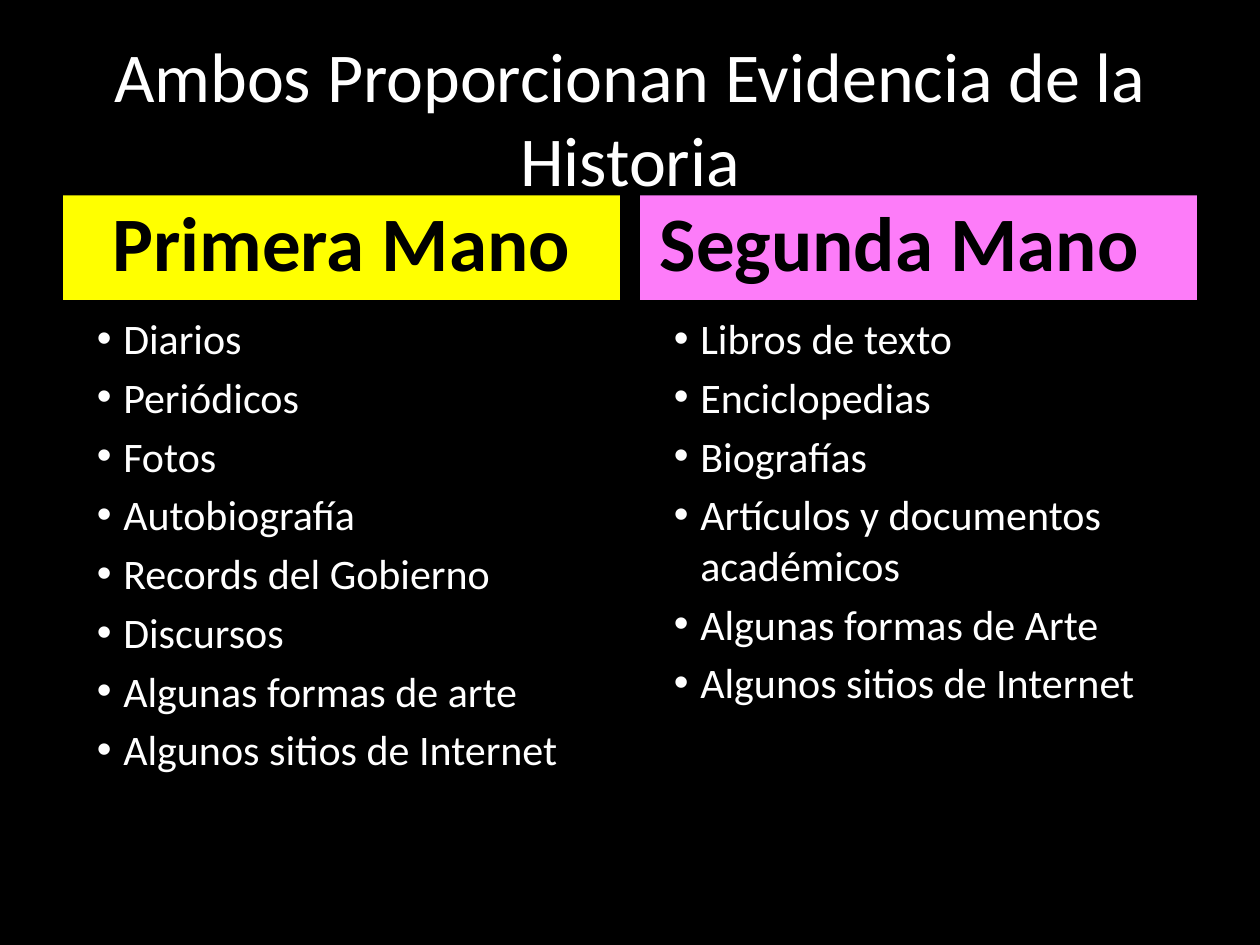
from lxml import etree
from pptx import Presentation
from pptx.dml.color import RGBColor
from pptx.enum.shapes import MSO_SHAPE
from pptx.enum.text import MSO_ANCHOR, PP_ALIGN
from pptx.oxml.ns import qn
from pptx.util import Inches, Pt

RECTANGLE = MSO_SHAPE.RECTANGLE
TOP, MIDDLE, BOTTOM = MSO_ANCHOR.TOP, MSO_ANCHOR.MIDDLE, MSO_ANCHOR.BOTTOM
LEFT, CENTER = PP_ALIGN.LEFT, PP_ALIGN.CENTER

COLORS = {"black": "000000", "white": "FFFFFF", "yellow": "FFFF00", "pink": "FD7CF9"}
TITLE = "Ambos Proporcionan Evidencia de la Historia"
SOURCES = [
    {
        "heading": "Primera Mano", "color": "yellow", "right_inset": 0.1,
        "examples": [
            "Diarios", "Periódicos", "Fotos", "Autobiografía",
            "Records del Gobierno", "Discursos", "Algunas formas de arte",
            "Algunos sitios de Internet",
        ],
    },
    {
        "heading": "Segunda Mano", "color": "pink", "right_inset": 0.4,
        "examples": [
            "Libros de texto", "Enciclopedias", "Biografías",
            "Artículos y documentos académicos", "Algunas formas de Arte",
            "Algunos sitios de Internet",
        ],
    },
]

SLIDE_WIDTH, SLIDE_HEIGHT = 10, 7.5
MARGIN, GAP = 0.5, 0.16
TITLE_TOP, TITLE_HEIGHT = 0.3, 1.25
HEADING_HEIGHT, LIST_HEIGHT = 0.83, 4.32
HEADING_TOP = TITLE_TOP + TITLE_HEIGHT
LIST_TOP = HEADING_TOP + HEADING_HEIGHT
CONTENT_WIDTH = SLIDE_WIDTH - 2 * MARGIN
COLUMN_WIDTH = (CONTENT_WIDTH - GAP) / 2


def rgb(name):
    return RGBColor.from_string(COLORS[name])


def add_bullet(paragraph, color):
    properties = paragraph._p.get_or_add_pPr()
    properties.set("marL", str(Inches(0.38)))
    properties.set("indent", str(Inches(-0.21)))
    bullet_color = etree.SubElement(properties, qn("a:buClr"))
    etree.SubElement(bullet_color, qn("a:srgbClr"), val=COLORS[color])
    etree.SubElement(properties, qn("a:buFont"), typeface="Arial")
    etree.SubElement(properties, qn("a:buChar"), char="•")


def add_text(slide, lines, box, size, color="white", fill=None, bold=False,
             align=LEFT, anchor=TOP, bullets=False, right_inset=0.1):
    place = [Inches(length) for length in box]
    if fill:
        shape = slide.shapes.add_shape(RECTANGLE, *place)
        shape.shadow.inherit = False
        shape.fill.solid()
        shape.fill.fore_color.rgb = rgb(fill)
        shape.line.fill.background()
    else:
        shape = slide.shapes.add_textbox(*place)
    frame = shape.text_frame
    frame.word_wrap = True
    frame.vertical_anchor = anchor
    frame.margin_left = frame.margin_top = frame.margin_bottom = Inches(0.1)
    frame.margin_right = Inches(right_inset)
    for index, line in enumerate(lines):
        paragraph = frame.add_paragraph() if index else frame.paragraphs[0]
        if bullets:
            add_bullet(paragraph, color)
        paragraph.alignment = align
        paragraph.space_before = Pt(4.8 if index else 0)
        run = paragraph.add_run()
        run.text = line
        run.font.name = "Calibri"
        run.font.size = Pt(size)
        run.font.bold = bold
        run.font.color.rgb = rgb(color)


def main():
    deck = Presentation()
    deck.slide_width, deck.slide_height = Inches(SLIDE_WIDTH), Inches(SLIDE_HEIGHT)
    slide = deck.slides.add_slide(deck.slide_layouts[6])
    slide.background.fill.solid()
    slide.background.fill.fore_color.rgb = rgb("black")

    add_text(slide, [TITLE], (MARGIN, TITLE_TOP, CONTENT_WIDTH, TITLE_HEIGHT), 40,
             align=CENTER, anchor=MIDDLE)
    for column, source in enumerate(SOURCES):
        left = MARGIN + column * (COLUMN_WIDTH + GAP)
        add_text(slide, [source["heading"]],
                 (left, HEADING_TOP, COLUMN_WIDTH, HEADING_HEIGHT), 44,
                 color="black", fill=source["color"], bold=True, align=CENTER,
                 anchor=BOTTOM, right_inset=source["right_inset"])
        add_text(slide, source["examples"],
                 (left, LIST_TOP, COLUMN_WIDTH, LIST_HEIGHT), 24, bullets=True)
    deck.save("out.pptx")


if __name__ == "__main__":
    main()
